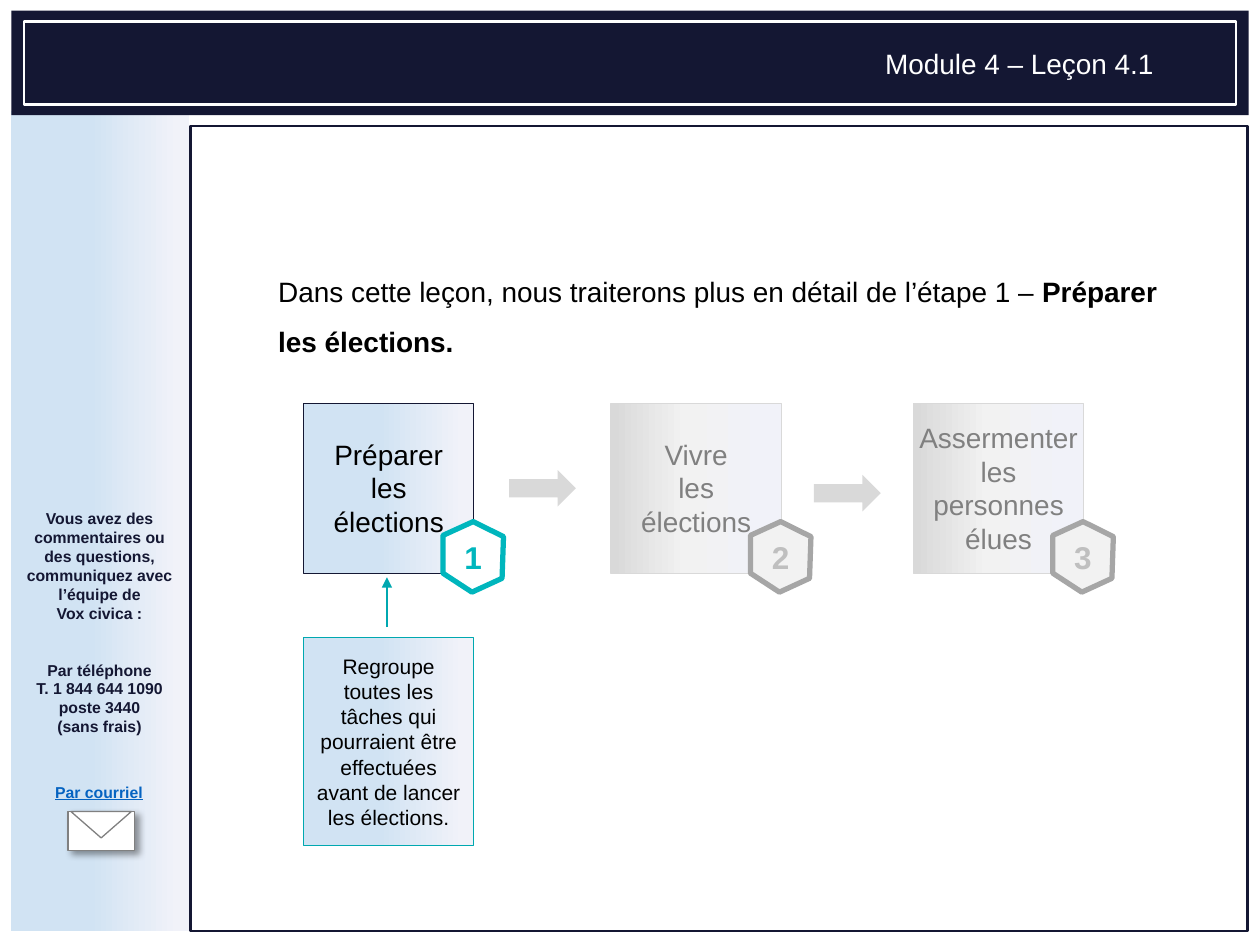
from copy import deepcopy

from lxml.etree import SubElement
from pptx import Presentation
from pptx.dml.color import RGBColor
from pptx.enum.shapes import MSO_SHAPE
from pptx.enum.text import MSO_ANCHOR, PP_ALIGN
from pptx.oxml.ns import qn
from pptx.util import Pt

THEME = {
    "font": "Arial",
    "navy": "141733",
    "white": "FFFFFF",
    "black": "000000",
    "teal": "00B6BD",
    "dark_teal": "00A8B0",
    "gray": "808080",
    "badge_gray": "A6A6A6",
    "number_gray": "BFBFBF",
    "light_gray": "D9D9D9",
    "pale_gray": "F2F2F2",
    "link": "0563C1",
    "blue_gradient": ((6, "F1F2F9"), (56, "D1E3F3"), (99, "CEE1F2")),
    "gray_gradient": ((6, "F1F2F9"), (56, "F2F2F2"), (99, "D9D9D9")),
    "body": 16,
    "badge": 18,
    "note": 12,
    "small": 9,
}

HEADER = "Module 4 – Leçon 4.1"
INTRO = (
    ("Dans cette leçon, nous traiterons plus en détail de l’étape 1 – ", False),
    ("Préparer les élections.", True),
)
CONTACT = (
    "Vous avez des commentaires ou des questions, communiquez avec l’équipe de\nVox civica :",
    "Par téléphone\nT. 1 844 644 1090\nposte 3440\n(sans frais)",
)
EMAIL = "Par courriel"
NOTE = "Regroupe toutes les tâches qui pourraient être effectuées avant de lancer les élections."

ACTIVE = {"box": "blue_gradient", "edge": "navy", "label": "black",
          "badge": "white", "ring": "teal", "number": "teal"}
INACTIVE = {"box": "gray_gradient", "edge": "light_gray", "label": "gray",
            "badge": "pale_gray", "ring": "badge_gray", "number": "number_gray"}
STEPS = (
    (173.5, "Préparer\nles\nélections", ACTIVE),
    (349.2, "Vivre\nles\nélections", INACTIVE),
    (522, "Assermenter\nles\npersonnes\nélues", INACTIVE),
)
STEP_TOP, STEP_SIZE = 230.4, 97.2
BADGE_OFFSET = (79.6, 67.7)
BADGE_OUTLINE = ((17.3, 0), (34.6, 8.6), (33.8, 32.4), (16.6, 40.3), (0, 29.5), (0, 7.9))
ARROWS = ((290.9, 268.6), (465.1, 271.4))


def color(name):
    return RGBColor.from_string(THEME[name])


def apply(target, values):
    for name, value in values.items():
        setattr(target, name, value)


def paint(shape, fill=None, line=None, width=0.75):
    shape.shadow.inherit = False
    if fill is None:
        shape.fill.background()
    elif isinstance(THEME[fill], tuple):
        shape.fill.gradient()
        shape.fill.gradient_angle = 180
        stops = shape._element.spPr.find(qn("a:gradFill")).find(qn("a:gsLst"))
        for stop in list(stops):
            stops.remove(stop)
        for position, value in THEME[fill]:
            stop = SubElement(stops, qn("a:gs"), pos=str(position * 1000))
            SubElement(stop, qn("a:srgbClr"), val=value)
    else:
        shape.fill.solid()
        shape.fill.fore_color.rgb = color(fill)
    if line is None:
        shape.line.fill.background()
    else:
        shape.line.color.rgb = color(line)
        shape.line.width = Pt(width)
    return shape


def add_box(slide, kind, area, **style):
    return paint(slide.shapes.add_shape(kind, *map(Pt, area)), **style)


def format_runs(paragraph, size, ink, **extra):
    values = {"name": THEME["font"], "size": Pt(THEME[size]), **extra}
    for run in paragraph.runs:
        apply(run.font, values)
        run.font.color.rgb = color(ink)
    for line_break in paragraph._p.findall(qn("a:br")):
        line_break.insert(0, deepcopy(paragraph.runs[0]._r.rPr))


def write(shape, texts, size, ink, align=PP_ALIGN.CENTER, anchor=MSO_ANCHOR.TOP,
          wrap=True, gap=0, **extra):
    frame = shape.text_frame
    apply(frame, {"word_wrap": wrap, "vertical_anchor": anchor})
    for index, text in enumerate(texts):
        paragraph = frame.add_paragraph() if index else frame.paragraphs[0]
        paragraph.text = text
        paragraph.alignment = align
        if index:
            paragraph.space_before = Pt(gap)
        format_runs(paragraph, size, ink, **extra)


def add_text(slide, area, texts, size, ink, **options):
    write(slide.shapes.add_textbox(*map(Pt, area)), texts, size, ink, **options)


def add_frame(slide):
    add_box(slide, MSO_SHAPE.RECTANGLE, (6.5, 63.4, 101.5, 468.7), fill="blue_gradient")
    add_box(slide, MSO_SHAPE.RECTANGLE, (108.7, 72, 604.1, 460.1), line="navy", width=1.5)
    add_box(slide, MSO_SHAPE.RECTANGLE, (6.5, 6.1, 707, 59.8), fill="navy")
    add_box(slide, MSO_SHAPE.RECTANGLE, (13.7, 12.2, 692.6, 47.5), line="white", width=1.5)
    add_text(slide, (495.4, 23, 174.2, 26.6), [HEADER], "body", "white")


def add_contact(slide):
    add_text(slide, (6.5, 287.3, 100.8, 138.2), CONTACT, "small", "navy", gap=21.5, bold=True)
    add_text(slide, (24.5, 443.5, 64.8, 18), [EMAIL], "small", "link",
             align=PP_ALIGN.LEFT, wrap=False, bold=True, underline=True)
    envelope = add_box(slide, MSO_SHAPE.RECTANGLE, (38.9, 463.7, 38.2, 22.3),
                       fill="white", line="gray")
    effects = envelope._element.spPr.find(qn("a:effectLst"))
    shadow = SubElement(effects, qn("a:outerShdw"), blurRad=str(Pt(4)), dist=str(Pt(3)),
                        dir="2700000", algn="tl", rotWithShape="0")
    ink = SubElement(shadow, qn("a:srgbClr"), val=THEME["black"])
    SubElement(ink, qn("a:alpha"), val="40000")
    flap = add_box(slide, MSO_SHAPE.ISOSCELES_TRIANGLE, (40.5, 463.7, 34.6, 15.1),
                   fill="white", line="gray")
    flap.rotation = 180


def add_intro(slide):
    frame = slide.shapes.add_textbox(*map(Pt, (151.9, 144, 528.5, 64.1))).text_frame
    apply(frame, {"word_wrap": True, "vertical_anchor": MSO_ANCHOR.BOTTOM})
    paragraph = frame.paragraphs[0]
    paragraph.line_spacing = 1.5
    for text, bold in INTRO:
        run = paragraph.add_run()
        run.text = text
        run.font.bold = bold
    format_runs(paragraph, "body", "black")


def add_step(slide, number, left, label, look):
    add_box(slide, MSO_SHAPE.RECTANGLE, (left, STEP_TOP, STEP_SIZE, STEP_SIZE),
            fill=look["box"], line=look["edge"])
    badge_left, badge_top = left + BADGE_OFFSET[0], STEP_TOP + BADGE_OFFSET[1]
    points = [(Pt(badge_left + x), Pt(badge_top + y)) for x, y in BADGE_OUTLINE]
    builder = slide.shapes.build_freeform(*points[0])
    builder.add_line_segments(points[1:], close=True)
    paint(builder.convert_to_shape(), look["badge"], look["ring"], 3)
    add_text(slide, (badge_left + 5, badge_top + 5.8, 24.5, 28.8), [str(number)],
             "badge", look["number"], anchor=MSO_ANCHOR.MIDDLE, wrap=False, bold=True)
    add_text(slide, (left - 7.2, 265, STEP_SIZE + 14.4, 27.4), [label],
             "body", look["label"], anchor=MSO_ANCHOR.MIDDLE)


def add_note(slide):
    callout = add_box(slide, MSO_SHAPE.LINE_CALLOUT_1,
                      (STEPS[0][0], 364.3, STEP_SIZE, 118.8),
                      fill="blue_gradient", line="dark_teal")
    for index, value in enumerate((-0.05, 0.49, -0.29, 0.49)):
        callout.adjustments[index] = value
    SubElement(callout.line._get_or_add_ln(), qn("a:tailEnd"), type="triangle")
    write(callout, [NOTE], "note", "black", anchor=MSO_ANCHOR.MIDDLE)


def main():
    presentation = Presentation()
    apply(presentation, {"slide_width": Pt(720), "slide_height": Pt(540)})
    slide = presentation.slides.add_slide(presentation.slide_layouts[6])
    add_frame(slide)
    add_contact(slide)
    add_intro(slide)
    for number, step in enumerate(STEPS, 1):
        add_step(slide, number, *step)
    for left, top in ARROWS:
        add_box(slide, MSO_SHAPE.RIGHT_ARROW, (left, top, 38.2, 20.9), fill="light_gray")
    add_note(slide)
    presentation.save("out.pptx")


if __name__ == "__main__":
    main()
